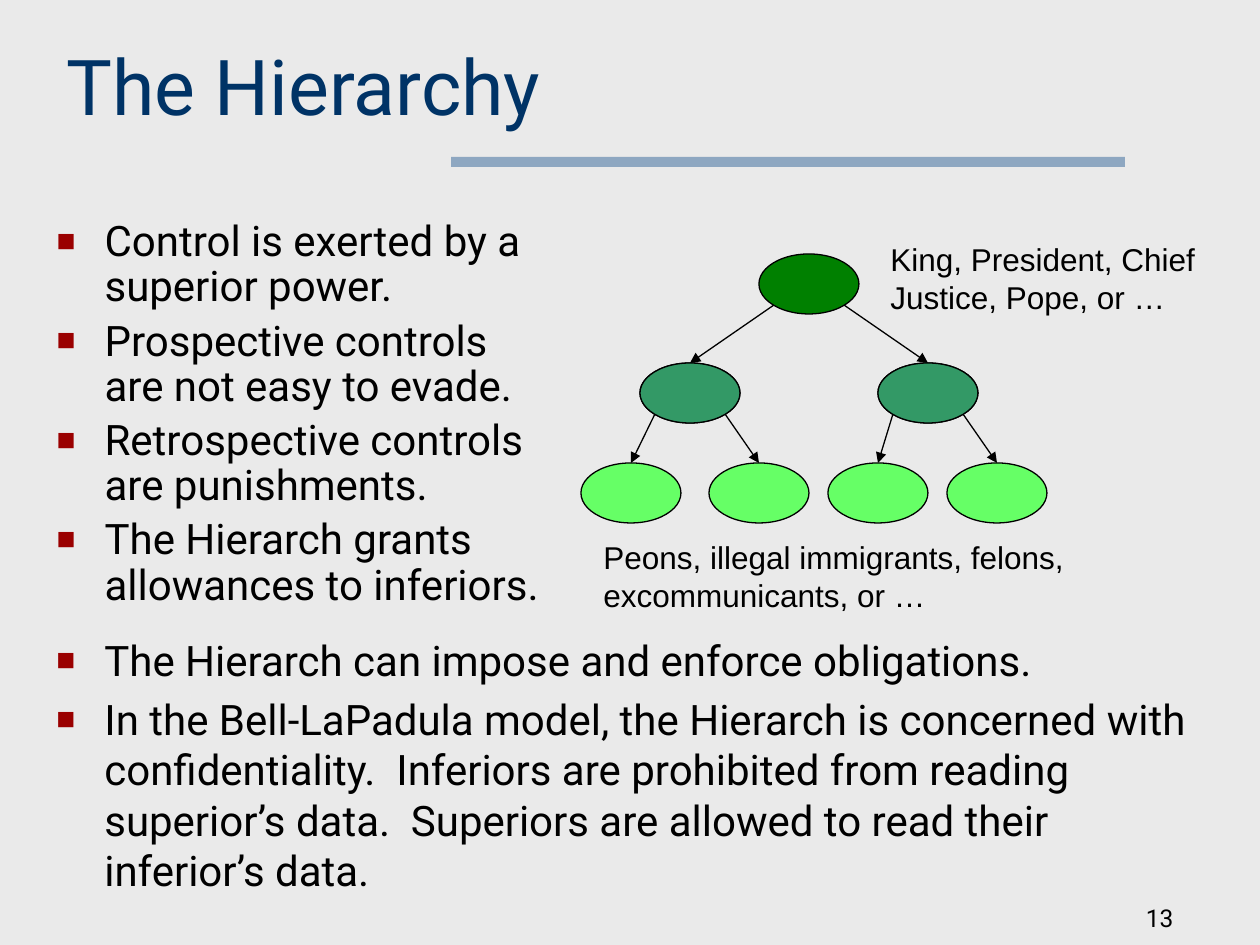
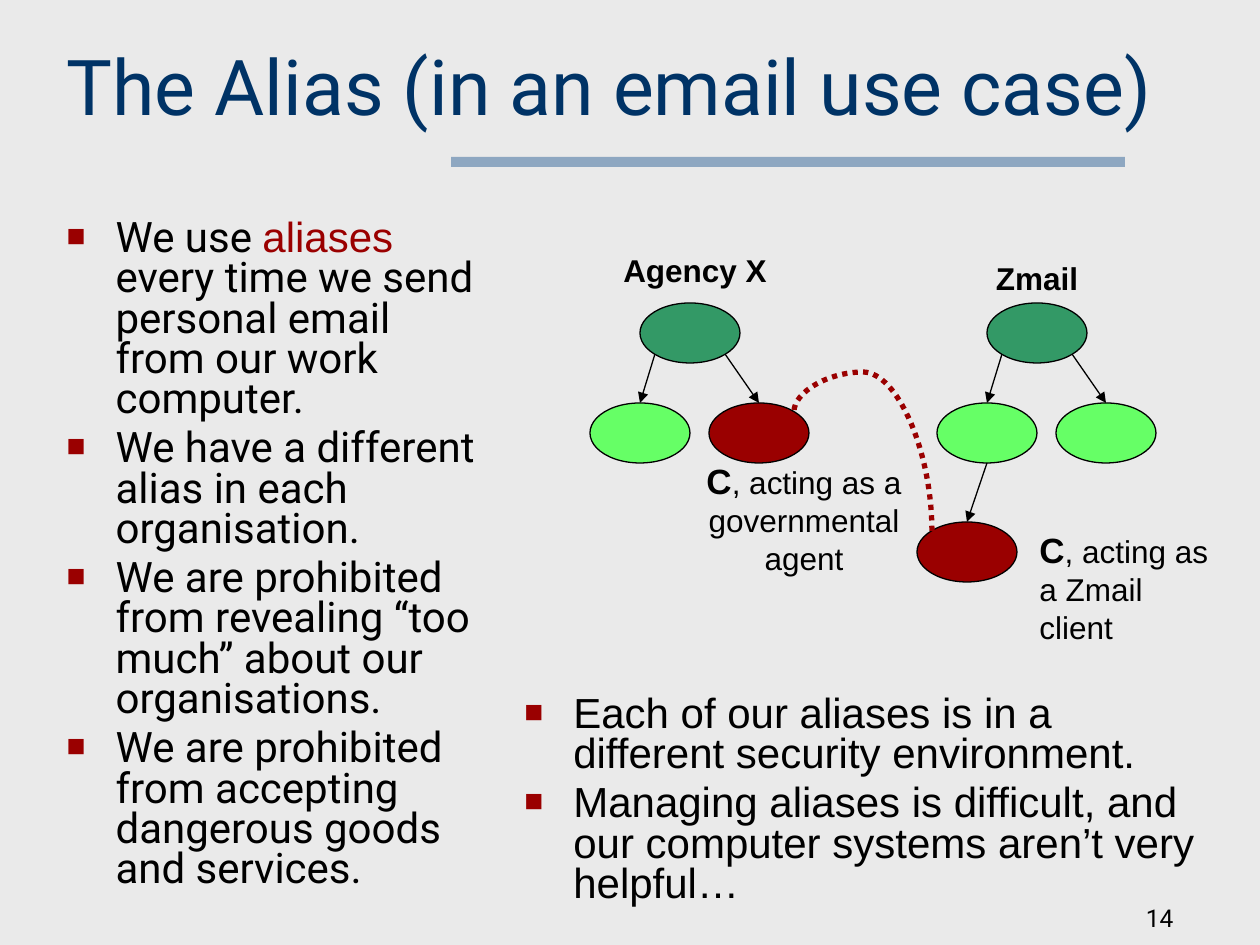
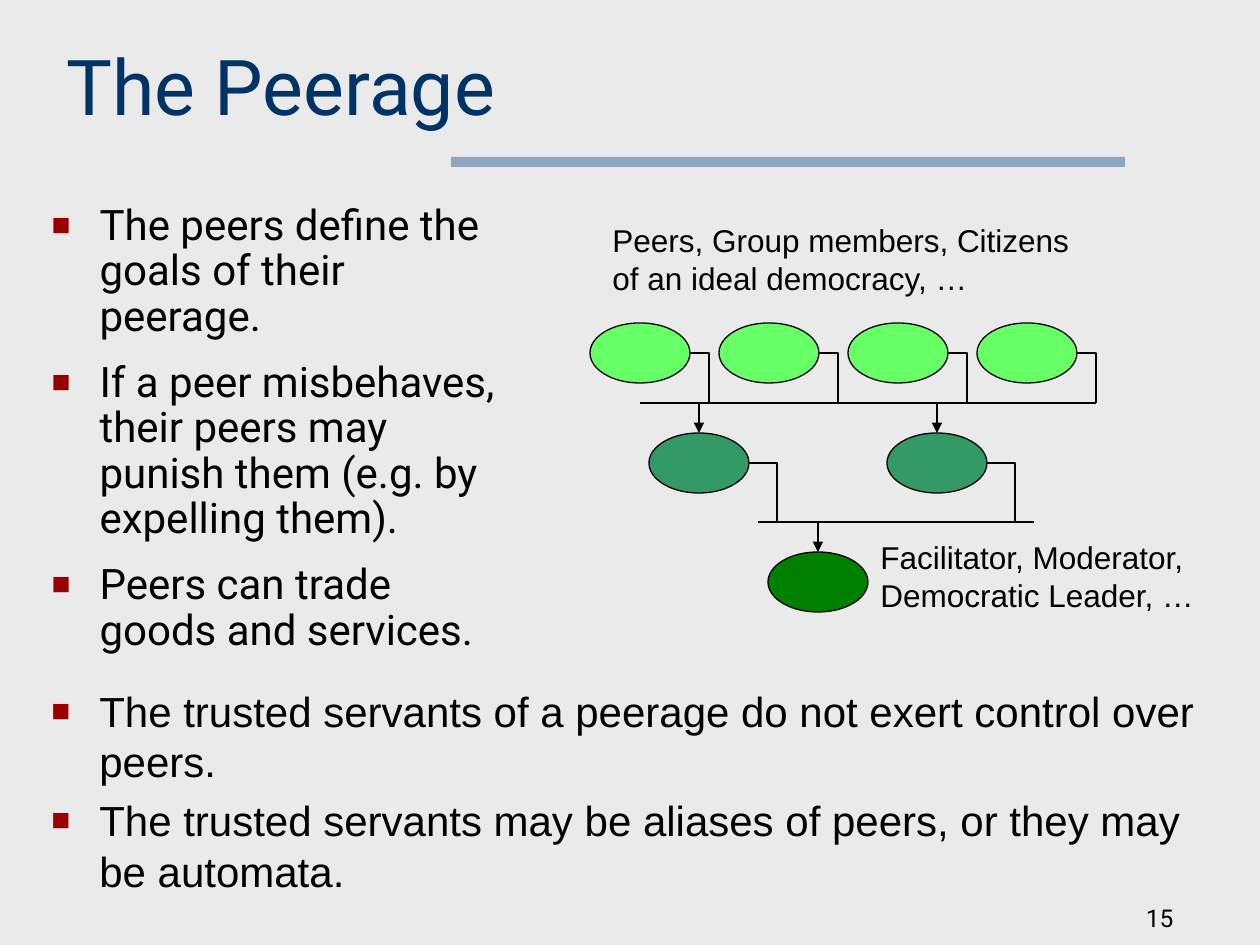
from itertools import product

from lxml.etree import SubElement
from pptx import Presentation
from pptx.dml.color import RGBColor
from pptx.enum.dml import MSO_LINE
from pptx.enum.shapes import MSO_CONNECTOR, MSO_SHAPE
from pptx.enum.text import MSO_ANCHOR, MSO_AUTO_SIZE, PP_ALIGN
from pptx.oxml.ns import qn
from pptx.util import Emu, Pt

PAPER = RGBColor(0xEA, 0xEA, 0xEA)
NAVY = RGBColor(0x00, 0x33, 0x66)
BLUE = RGBColor(0x33, 0x66, 0x99)
BLACK = RGBColor(0x00, 0x00, 0x00)
RED = RGBColor(0x9A, 0x00, 0x00)
DARK_GREEN = RGBColor(0x00, 0x80, 0x00)
MID_GREEN = RGBColor(0x33, 0x99, 0x66)
LIGHT_GREEN = RGBColor(0x66, 0xFF, 0x66)

NODE_W, NODE_H = 100, 60
SITE_X, SITE_Y = 35, 21

TITLE = {"size": Pt(44), "name": "Roboto", "color": NAVY}
LIST = {"size": Pt(24), "name": "Roboto", "color": BLACK}
LIST_ARIAL = {**LIST, "name": "Arial"}
LABEL = {"size": Pt(18), "name": "Arial", "color": BLACK}
BOLD = {**LABEL, "bold": True}
INITIAL = {**BOLD, "size": Pt(20)}
NUMBER = {"size": Pt(14), "name": "Roboto", "color": BLACK}


def px(n):
    """Turn pixels into EMU."""
    return Emu(round(n * 914400 / 126))


def assign(obj, **values):
    """Set each named attribute."""
    for name, value in values.items():
        setattr(obj, name, value)


def place(shape, box):
    """Move a shape to a left, top, width, height box."""
    assign(shape, **dict(zip(("left", "top", "width", "height"), map(px, box))))


def add_run(p, text, fmt):
    """Add one formatted run."""
    r = p.add_run()
    r.text = text
    for name, value in fmt.items():
        if name == "color":
            r.font.color.rgb = value
        else:
            setattr(r.font, name, value)


def add_bullet(p, indent):
    """Give a paragraph a red square bullet with a hanging indent."""
    pPr = p._p.get_or_add_pPr()
    pPr.set("marL", str(px(indent)))
    pPr.set("indent", str(-px(indent)))
    SubElement(SubElement(pPr, qn("a:buClr")), qn("a:srgbClr"), val=str(RED))
    SubElement(pPr, qn("a:buSzPct"), val="75000")
    SubElement(pPr, qn("a:buFont"), typeface="Arial")
    SubElement(pPr, qn("a:buChar"), char="■")


def fill_text(shape, paragraphs, fmt, align=PP_ALIGN.LEFT, anchor=MSO_ANCHOR.TOP,
              indent=0, leading=1.0, gap=5):
    """Write paragraphs, each a string or a list of (text, format) runs."""
    tf = shape.text_frame
    assign(tf, word_wrap=True, auto_size=MSO_AUTO_SIZE.NONE, vertical_anchor=anchor)
    for i, runs in enumerate(paragraphs):
        p = tf.add_paragraph() if i else tf.paragraphs[0]
        if indent:
            add_bullet(p, indent)
        assign(p, alignment=align, line_spacing=leading, space_before=Pt(gap if i else 0))
        for text, run_fmt in [(runs, fmt)] if isinstance(runs, str) else runs:
            add_run(p, text, run_fmt)


def add_text(s, box, paragraphs, fmt=LABEL, **layout):
    """Add a text box."""
    fill_text(s.shapes.add_textbox(*map(px, box)), paragraphs, fmt, **layout)


def add_body(s, box, paragraphs, **layout):
    """Fill the body placeholder with a bulleted list."""
    body = s.placeholders[1]
    place(body, box)
    fill_text(body, paragraphs, LIST, **layout)


def add_figure(s, kind, box, color):
    """Add a filled preset shape without a shadow."""
    shape = s.shapes.add_shape(kind, *map(px, box))
    shape.shadow.inherit = False
    shape.fill.solid()
    shape.fill.fore_color.rgb = color
    return shape


def add_slide(prs, title, number):
    """Add a slide with its title, band and number."""
    s = prs.slides.add_slide(prs.slide_layouts[1])
    band = add_figure(s, MSO_SHAPE.RECTANGLE, (451, 157, 674, 10), BLUE)
    band.line.fill.background()
    color = band._element.spPr.find(qn("a:solidFill"))[0]
    SubElement(color, qn("a:alpha"), val="50000")
    add_text(s, (924, 900, 262, 39), [str(number)], NUMBER,
             align=PP_ALIGN.RIGHT, anchor=MSO_ANCHOR.BOTTOM)
    place(s.shapes.title, (54, 32, 1137, 150))
    fill_text(s.shapes.title, [title], TITLE)
    return s


def add_node(s, center, color):
    """Add an ellipse around its center."""
    x, y = center
    box = (x - NODE_W // 2, y - NODE_H // 2, NODE_W, NODE_H)
    node = add_figure(s, MSO_SHAPE.OVAL, box, color)
    node.line.color.rgb = BLACK
    node.line.width = Pt(0.75)


def add_line(s, start, end, kind=MSO_CONNECTOR.STRAIGHT, arrow=False, color=BLACK, width=0.75):
    """Add a connector, with an arrowhead at its end if asked."""
    c = s.shapes.add_connector(kind, *map(px, start + end))
    c.line.color.rgb = color
    c.line.width = Pt(width)
    if arrow:
        SubElement(c.line._get_or_add_ln(), qn("a:tailEnd"), type="triangle")
    SubElement(c._element.spPr, qn("a:effectLst"))
    return c


def add_branches(s, parent, children):
    """Draw arrows from the lower sides of a parent to the tops of its children."""
    x, y = parent
    for cx, cy in children:
        side = SITE_X if cx > x else -SITE_X
        add_line(s, (x + side, y + SITE_Y), (cx, cy - NODE_H // 2), arrow=True)


def add_tree(s, parent, children, colors):
    """Draw a parent in the first color and its children in the others."""
    add_branches(s, parent, children)
    for center, color in zip([parent, *children], colors):
        add_node(s, center, color)


def add_elbow(s, node, run, bus_y):
    """Lead the right side of a node down to a bus."""
    x, y = node[0] + NODE_W // 2, node[1]
    c = add_line(s, (x, y), (x + run, bus_y), MSO_CONNECTOR.ELBOW)
    c._element.spPr.find(qn("a:prstGeom")).set("prst", "bentConnector2")


def add_alias_link(s, client, agent, rise):
    """Join two aliases by a dotted curve that rises above the agent."""
    x1, y1 = client[0] - SITE_X, client[1] - SITE_Y
    x2, y2 = agent[0] + SITE_X, agent[1] - SITE_Y
    w, h = y1 - y2, x1 - x2
    c = add_line(s, (x1, y1), (x2, y2), MSO_CONNECTOR.CURVE, color=RED, width=3)
    c.line.dash_style = MSO_LINE.ROUND_DOT
    place(c, ((x1 + x2 - w) / 2, (y1 + y2 - h) / 2, w, h))
    xfrm = c._element.spPr.find(qn("a:xfrm"))
    xfrm.attrib.pop("flipV", None)
    xfrm.set("rot", "5400000")
    xfrm.set("flipH", "1")
    geom = c._element.spPr.find(qn("a:prstGeom"))
    guides = geom.find(qn("a:avLst"))
    SubElement(guides, qn("a:gd"), name="adj1", fmla=f"val {round((w + rise) / w * 100000)}")


def hierarchy_slide(prs):
    """Build the slide on the hierarchy."""
    s = add_slide(prs, "The Hierarchy", 13)
    add_body(s, (44, 214, 517, 397), [
        "Control is exerted by a superior power.",
        "Prospective controls are not easy to evade.",
        "Retrospective controls are punishments.",
        "The Hierarch grants allowances to inferiors.",
    ], indent=48, leading=0.9)
    root, left, right = (809, 284), (690, 393), (928, 393)
    add_tree(s, root, [left, right], [DARK_GREEN, MID_GREEN, MID_GREEN])
    for parent, xs in ((left, (631, 759)), (right, (878, 997))):
        add_tree(s, parent, list(product(xs, [493])), [MID_GREEN, LIGHT_GREEN, LIGHT_GREEN])
    add_text(s, (878, 234, 348, 88), ["King, President, Chief Justice, Pope, or …"])
    add_text(s, (591, 532, 588, 88), ["Peons, illegal immigrants, felons, excommunicants, or …"])
    add_text(s, (44, 628, 1186, 277), [
        "The Hierarch can impose and enforce obligations.",
        "In the Bell-LaPadula model, the Hierarch is concerned with confidentiality.  "
        "Inferiors are prohibited from reading superior’s data.  "
        "Superiors are allowed to read their inferior’s data.",
    ], LIST, indent=48)


def alias_slide(prs):
    """Build the slide on aliases."""
    s = add_slide(prs, "The Alias (in an email use case)", 14)
    add_body(s, (54, 214, 437, 694), [
        [("We use ", LIST), ("aliases ", {**LIST_ARIAL, "color": RED}),
         ("every time we send personal email from our work computer.", LIST)],
        "We have a different alias in each organisation.",
        "We are prohibited from revealing “too much” about our organisations.",
        "We are prohibited from accepting dangerous goods and services.",
    ], indent=49, leading=0.8)
    agent, account, client = (759, 433), (987, 433), (967, 552)
    add_tree(s, (690, 333), [(640, 433), agent], [MID_GREEN, LIGHT_GREEN, RED])
    add_tree(s, (1037, 333), [account, (1106, 433)], [MID_GREEN, LIGHT_GREEN, LIGHT_GREEN])
    add_line(s, (account[0], 463), (client[0], 522), arrow=True)
    add_node(s, client, RED)
    add_text(s, (591, 245, 208, 50), ["Agency X"], BOLD, align=PP_ALIGN.CENTER)
    add_text(s, (938, 253, 198, 50), ["Zmail"], BOLD, align=PP_ALIGN.CENTER)
    add_text(s, (680, 453, 248, 130),
             [[("C", INITIAL), (", acting as a governmental agent", LABEL)]],
             align=PP_ALIGN.CENTER)
    add_text(s, (1027, 522, 198, 130),
             [[("C", INITIAL), (", acting as a Zmail client", LABEL)]])
    add_text(s, (512, 690, 704, 227), [
        "Each of our aliases is in a different security environment.",
        "Managing aliases is difficult, and our computer systems aren’t very helpful…",
    ], LIST_ARIAL, indent=49, leading=0.8)
    add_alias_link(s, client, agent, 40)


def peerage_slide(prs):
    """Build the slide on the peerage."""
    s = add_slide(prs, "The Peerage", 15)
    add_body(s, (39, 198, 483, 461), [
        "The peers define the goals of their peerage.",
        "If a peer misbehaves, their peers may punish them (e.g. by expelling them).",
        "Peers can trade goods and services.",
    ], indent=48, leading=0.9, gap=12)
    add_text(s, (39, 679, 1172, 227), [
        "The trusted servants of a peerage do not exert control over peers.",
        "The trusted servants may be aliases of peers, or they may be automata.",
    ], LIST_ARIAL, indent=48)
    peers = [(640 + 129 * i, 353) for i in range(4)]
    servants = [(699, 463), (937, 463)]
    leader = (818, 582)
    for nodes, color, run, bus, targets in (
        (peers, LIGHT_GREEN, 19, (640, 1096, 403), servants),
        (servants, MID_GREEN, 28, (758, 1034, 522), [leader]),
    ):
        left, right, y = bus
        add_line(s, (left, y), (right, y))
        for node in nodes:
            add_node(s, node, color)
            add_elbow(s, node, run, y)
        for x, cy in targets:
            add_line(s, (x, y), (x, cy - NODE_H // 2), arrow=True)
    add_node(s, leader, DARK_GREEN)
    add_text(s, (600, 215, 486, 88), ["Peers, Group members, Citizens of an ideal democracy, …"])
    add_text(s, (868, 532, 348, 88), ["Facilitator, Moderator, Democratic Leader, …"])


def main():
    """Build and save the presentation."""
    prs = Presentation()
    assign(prs, slide_width=px(1260), slide_height=px(945))
    fill = prs.slide_master.background.fill
    fill.solid()
    fill.fore_color.rgb = PAPER
    for build in (hierarchy_slide, alias_slide, peerage_slide):
        build(prs)
    prs.save("out.pptx")


if __name__ == "__main__":
    main()
